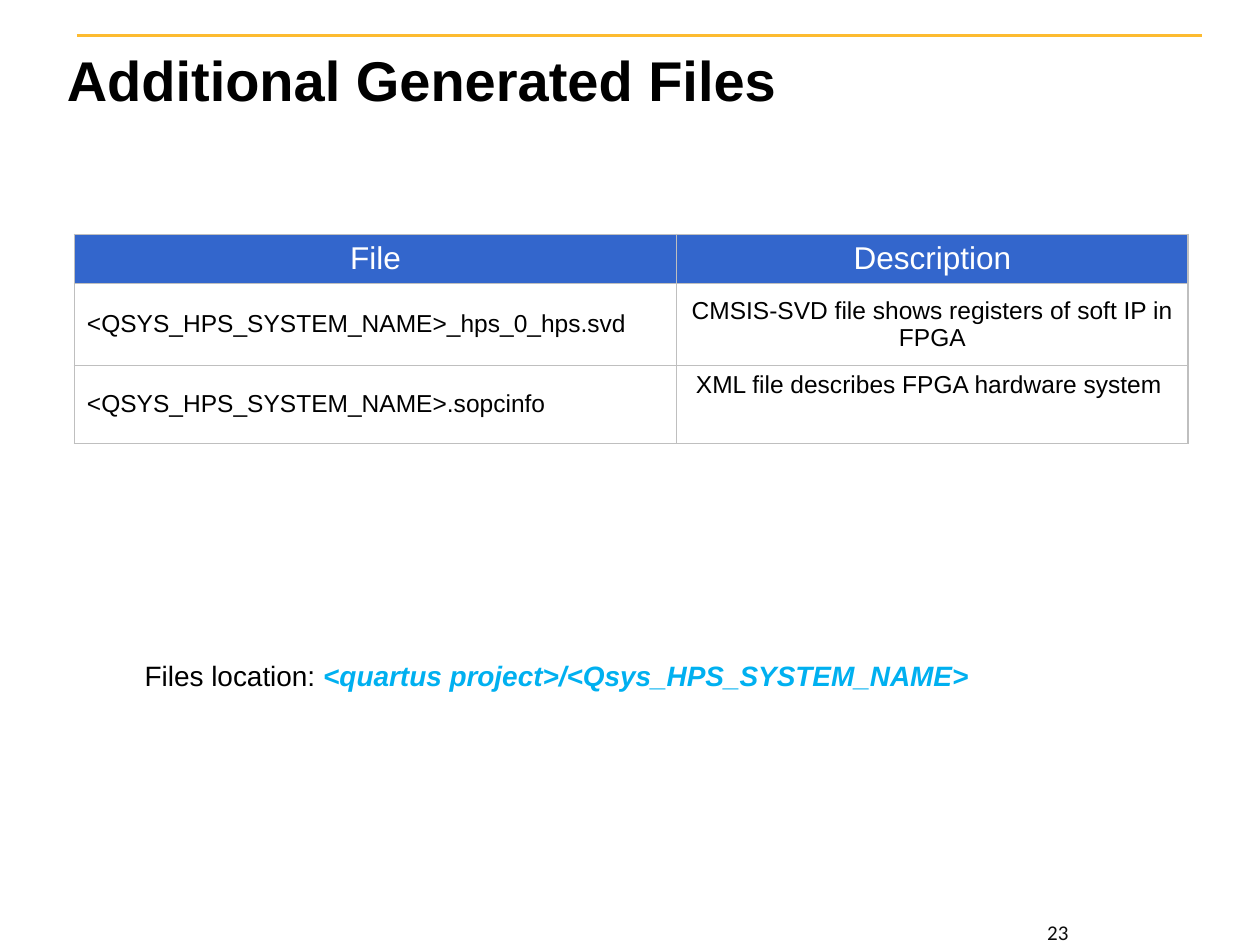
"""Build the slide on additional generated files."""
import pptx
import pptx.util
import pptx.dml.color
import pptx.enum.shapes
import pptx.enum.text
import pptx.oxml
import pptx.oxml.ns
from dataclasses import dataclass

Inches = pptx.util.Inches
Align = pptx.enum.text.PP_ALIGN
Anchor = pptx.enum.text.MSO_ANCHOR
NS = pptx.oxml.ns.nsdecls("a")


@dataclass
class Theme:
    black: str = "000000"
    white: str = "FFFFFF"
    dark: str = "0D0D0D"
    gold: str = "FDBB30"
    blue: str = "3366CC"
    cyan: str = "00B0F0"
    grid: str = "BFBFBF"
    title: int = 32
    head: int = 18
    note: int = 16
    cell: int = 14
    page: int = 12
    face: str = "Arial"
    small: str = "Calibri"


theme = Theme()


def style(run, size, color, face=theme.face, bold=False, italic=False):
    font = run.font
    font.size = pptx.util.Pt(size)
    font.name = face
    font.bold = bold
    font.italic = italic
    font.color.rgb = pptx.dml.color.RGBColor.from_string(color)


def edge(cell):
    props = cell._tc.get_or_add_tcPr()
    for side in ("lnL", "lnR", "lnT", "lnB"):
        props.append(pptx.oxml.parse_xml(
            f'<a:{side} {NS} w="12700"><a:solidFill>'
            f'<a:srgbClr val="{theme.grid}"/></a:solidFill></a:{side}>'))


deck = pptx.Presentation()
deck.slide_width = Inches(10)
deck.slide_height = Inches(7.5)
slide = deck.slides.add_slide(deck.slide_layouts[5])
shapes = slide.shapes

rule = shapes.add_connector(
    pptx.enum.shapes.MSO_CONNECTOR.STRAIGHT,
    Inches(0.61), Inches(0.28), Inches(9.54), Inches(0.28))
rule.line.width = pptx.util.Pt(2)
rule.line.color.rgb = pptx.dml.color.RGBColor.from_string(theme.gold)
rule._element.spPr.append(pptx.oxml.parse_xml(f"<a:effectLst {NS}/>"))

title = shapes.title
title.left, title.top = Inches(0.43), Inches(0.13)
title.width, title.height = Inches(9.11), Inches(1)
title.text_frame.text = "Additional Generated Files"
title.text_frame.vertical_anchor = Anchor.MIDDLE
line = title.text_frame.paragraphs[0]
line.alignment = Align.LEFT
style(line.runs[0], theme.title, theme.black, bold=True)
glow = pptx.oxml.parse_xml(
    f'<a:effectLst {NS}><a:outerShdw blurRad="38100" dist="38100" dir="2700000">'
    f'<a:srgbClr val="{theme.black}"><a:alpha val="43000"/></a:srgbClr>'
    '</a:outerShdw></a:effectLst>')
line.runs[0]._r.rPr.find(pptx.oxml.ns.qn("a:solidFill")).addnext(glow)

rows = [
    ("File", "Description"),
    ("<QSYS_HPS_SYSTEM_NAME>_hps_0_hps.svd",
     "CMSIS-SVD file shows registers of soft IP in FPGA"),
    ("<QSYS_HPS_SYSTEM_NAME>.sopcinfo",
     "XML file describes FPGA hardware system "),
]
table = shapes.add_table(
    3, 2, Inches(0.59), Inches(1.86), Inches(8.84), Inches(1.66)).table
table.first_row = False
table.horz_banding = False
for col, width in zip(table.columns, (4.78, 4.06)):
    col.width = Inches(width)
for row, height in zip(table.rows, (0.39, 0.65, 0.62)):
    row.height = Inches(height)
for r, texts in enumerate(rows):
    for c, text in enumerate(texts):
        cell = table.cell(r, c)
        cell.text_frame.text = text
        para = cell.text_frame.paragraphs[0]
        para.alignment = Align.LEFT if r and not c else Align.CENTER
        middle = r == 1 or (r == 2 and c == 0)
        cell.vertical_anchor = Anchor.MIDDLE if middle else Anchor.TOP
        edge(cell)
        if r == 0:
            cell.fill.solid()
            cell.fill.fore_color.rgb = pptx.dml.color.RGBColor.from_string(theme.blue)
            style(para.runs[0], theme.head, theme.white)
        else:
            cell.fill.background()
            style(para.runs[0], theme.cell, theme.black)

note = shapes.add_textbox(Inches(1.05), Inches(5.18), Inches(7.91), Inches(0.37))
note.text_frame.word_wrap = True
note.text_frame.auto_size = pptx.enum.text.MSO_AUTO_SIZE.SHAPE_TO_FIT_TEXT
para = note.text_frame.paragraphs[0]
para.text = "Files location: "
style(para.runs[0], theme.note, theme.black)
place = para.add_run()
place.text = "<quartus project>/<Qsys_HPS_SYSTEM_NAME>"
style(place, theme.note, theme.cyan, bold=True, italic=True)

page = shapes.add_textbox(Inches(7.55), Inches(7.3), Inches(1.69), Inches(0.2))
page.text_frame.word_wrap = True
page.text_frame.vertical_anchor = Anchor.MIDDLE
page.text_frame.text = "23"
para = page.text_frame.paragraphs[0]
para.alignment = Align.CENTER
style(para.runs[0], theme.page, theme.dark, face=theme.small)

deck.save("out.pptx")
